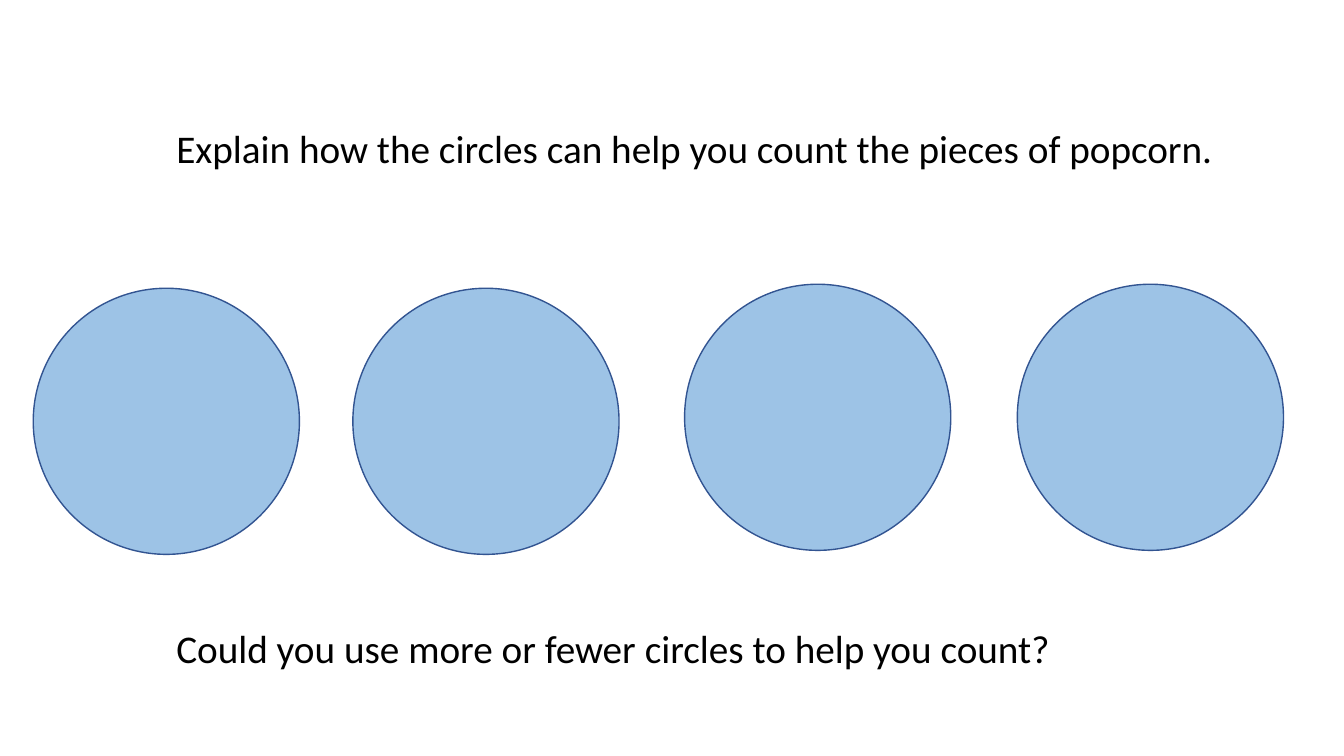
"""Build a slide with four counting circles and two questions."""
import pptx
import pptx.util
import pptx.dml.color
import pptx.enum.shapes
import pptx.enum.text

Inches = pptx.util.Inches
COLORS = {"text": "000000", "fill": "9DC3E6", "line": "325491"}
SIZE = 2.64
SPOTS = [(0.33, 2.86), (3.5, 2.86), (6.79, 2.82), (10.09, 2.82)]
LINES = [
    (1.18, "Explain how the circles can help you count the pieces of popcorn."),
    (6.14, "Could you use more or fewer circles to help you count?"),
]


def color(name):
    return pptx.dml.color.RGBColor.from_string(COLORS[name])


def add_text(slide, top, words):
    box = slide.shapes.add_textbox(
        Inches(1.65), Inches(top), Inches(10.85), Inches(0.57))
    frame = box.text_frame
    frame.word_wrap = True
    frame.auto_size = pptx.enum.text.MSO_AUTO_SIZE.SHAPE_TO_FIT_TEXT
    run = frame.paragraphs[0].add_run()
    run.text = words
    run.font.name = "Calibri"
    run.font.size = pptx.util.Pt(28)
    run.font.color.rgb = color("text")


def add_circle(slide, left, top):
    circle = slide.shapes.add_shape(
        pptx.enum.shapes.MSO_SHAPE.OVAL,
        Inches(left), Inches(top), Inches(SIZE), Inches(SIZE))
    circle.shadow.inherit = False
    circle.fill.solid()
    circle.fill.fore_color.rgb = color("fill")
    circle.line.color.rgb = color("line")
    circle.line.width = pptx.util.Pt(1)


def main():
    deck = pptx.Presentation()
    deck.slide_width = Inches(13.33)
    deck.slide_height = Inches(7.5)
    slide = deck.slides.add_slide(deck.slide_layouts[6])
    for left, top in SPOTS:
        add_circle(slide, left, top)
    for top, words in LINES:
        add_text(slide, top, words)
    deck.save("out.pptx")


if __name__ == "__main__":
    main()
